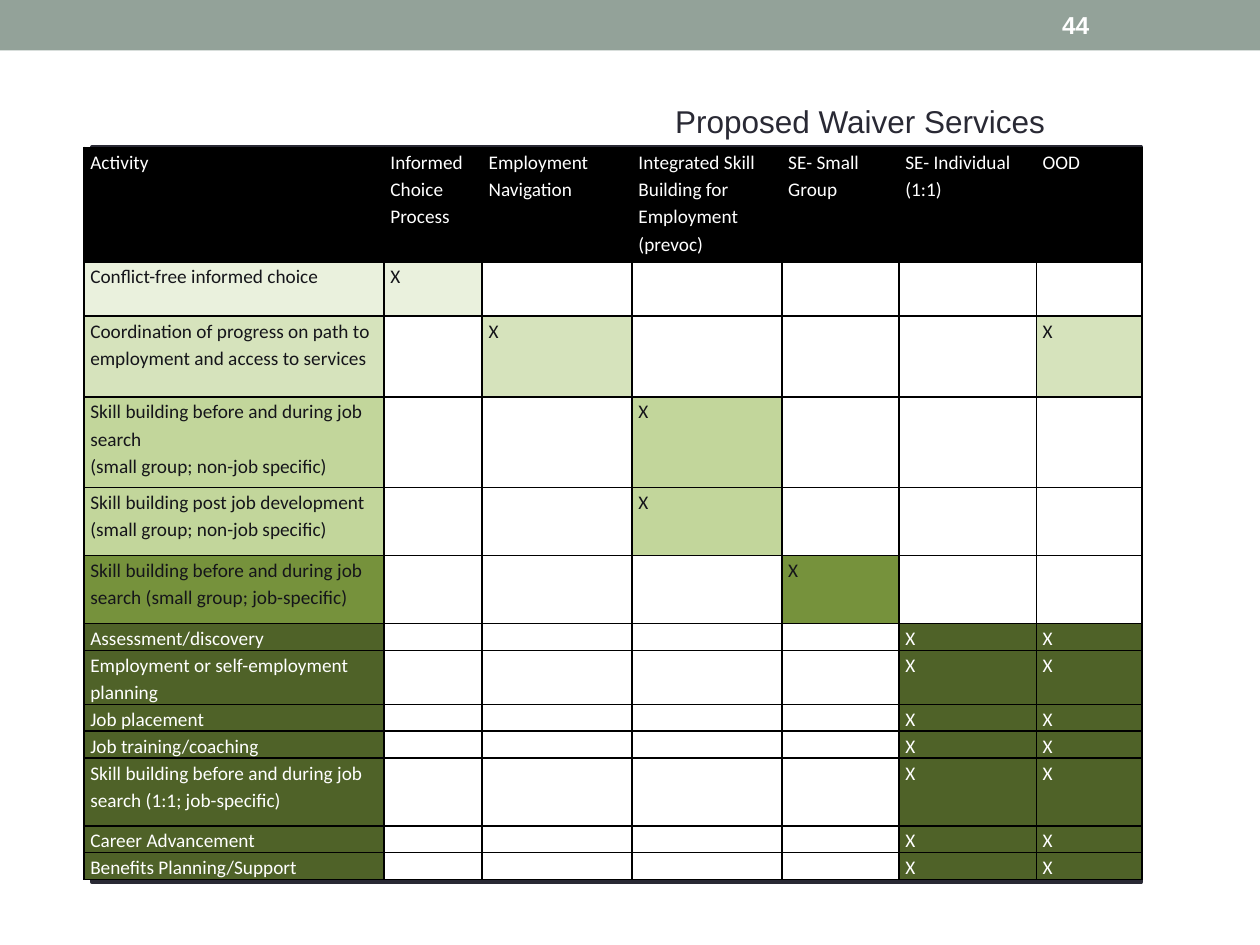
import pptx
import pptx.dml.color
import pptx.enum.shapes
import pptx.enum.text
import pptx.oxml
import pptx.oxml.ns
import pptx.util

Cm = pptx.util.Cm
Pt = pptx.util.Pt

COLORS = {
    "banner": "93A299",
    "ink": "292934",
    "body": "15151A",
    "white": "FFFFFF",
    "black": "000000",
    "palest": "EAF1DD",
    "pale": "D6E3BC",
    "light": "C2D69B",
    "medium": "76923C",
    "dark": "4F6228",
}

TITLE = "Proposed Waiver Services"
PAGE_NUMBER = "44"

COLUMNS = [
    ("Activity", 6.05),
    ("Informed Choice Process", 1.98),
    ("Employment Navigation", 3.02),
    ("Integrated Skill Building for Employment (prevoc)", 3.02),
    ("SE- Small Group", 2.36),
    ("SE- Individual (1:1)", 2.77),
    ("OOD", 2.13),
]
HEADER_HEIGHT = 2.31

ACTIVITIES = [
    ("Conflict-free informed choice", "palest", [1], 1.09),
    ("Coordination of progress on path to employment and access to services", "pale", [2, 6], 1.63),
    ("Skill building before and during job search\n(small group; non-job specific)", "light", [3], 1.83),
    ("Skill building post job development (small group; non-job specific)", "light", [3], 1.37),
    ("Skill building before and during job search (small group; job-specific)", "medium", [4], 1.37),
    ("Assessment/discovery", "dark", [5, 6], 0.54),
    ("Employment or self-employment planning", "dark", [5, 6], 1.09),
    ("Job placement", "dark", [5, 6], 0.54),
    ("Job training/coaching", "dark", [5, 6], 0.54),
    ("Skill building before and during job search (1:1; job-specific)", "dark", [5, 6], 1.37),
    ("Career Advancement", "dark", [5, 6], 0.54),
    ("Benefits Planning/Support", "dark", [5, 6], 0.54),
]


def rgb(name):
    return pptx.dml.color.RGBColor.from_string(COLORS[name])


def style_font(font, name, size, color, bold=False):
    font.name = name
    font.size = Pt(size)
    font.bold = bold
    font.color.rgb = rgb(color)


def add_panel(page, left, top, width, height, color, line_width=None):
    panel = page.shapes.add_shape(
        pptx.enum.shapes.MSO_SHAPE.RECTANGLE, Cm(left), Cm(top), Cm(width), Cm(height))
    panel.shadow.inherit = False
    panel.fill.solid()
    panel.fill.fore_color.rgb = rgb(color)
    if line_width:
        panel.line.color.rgb = rgb(color)
        panel.line.width = Pt(line_width)
    else:
        panel.line.fill.background()


def add_text(page, text, left, top, width, height, size, color, bold=False):
    box = page.shapes.add_textbox(Cm(left), Cm(top), Cm(width), Cm(height))
    frame = box.text_frame
    frame.word_wrap = True
    frame.vertical_anchor = pptx.enum.text.MSO_ANCHOR.MIDDLE
    frame.text = text
    style_font(frame.paragraphs[0].font, "Arial", size, color, bold)


def add_borders(cell):
    properties = cell._tc.get_or_add_tcPr()
    for position, side in enumerate(["lnL", "lnR", "lnT", "lnB"]):
        border = pptx.oxml.parse_xml(
            f'<a:{side} {pptx.oxml.ns.nsdecls("a")} w="{Pt(1)}"><a:solidFill>'
            f'<a:srgbClr val="{COLORS["black"]}"/></a:solidFill></a:{side}>')
        properties.insert(position, border)


def fill_cell(cell, text, fill, color):
    cell.margin_left = cell.margin_right = Cm(0.13)
    cell.margin_top = cell.margin_bottom = 0
    cell.fill.solid()
    cell.fill.fore_color.rgb = rgb(fill)
    add_borders(cell)
    cell.text_frame.text = text
    for para in cell.text_frame.paragraphs:
        para.line_spacing = 1.15
        style_font(para.font, "Calibri", 11, color)
        if not text:
            para._p.append(pptx.oxml.parse_xml(
                f'<a:endParaRPr {pptx.oxml.ns.nsdecls("a")} sz="1100">'
                '<a:latin typeface="Calibri"/></a:endParaRPr>'))


def add_services_table(page):
    frame = page.shapes.add_table(
        len(ACTIVITIES) + 1, len(COLUMNS), Cm(1.69), Cm(2.97),
        Cm(sum(width for _, width in COLUMNS)),
        Cm(HEADER_HEIGHT + sum(row[-1] for row in ACTIVITIES)))
    table = frame.table
    table.first_row = False
    table.horz_banding = False
    table.rows[0].height = Cm(HEADER_HEIGHT)
    for column, (heading, width) in enumerate(COLUMNS):
        table.columns[column].width = Cm(width)
        fill_cell(table.cell(0, column), heading, "black", "white")
    for row, (activity, shade, marked, height) in enumerate(ACTIVITIES, start=1):
        table.rows[row].height = Cm(height)
        color = "white" if shade == "dark" else "body"
        for column in range(len(COLUMNS)):
            text = activity if column == 0 else "X" if column in marked else ""
            fill_cell(table.cell(row, column), text, shade if text else "white", color)


def main():
    deck = pptx.Presentation()
    deck.slide_width = Cm(25.4)
    deck.slide_height = Cm(19.05)
    page = deck.slides.add_slide(deck.slide_layouts[6])
    add_panel(page, 0, 0, 25.4, 1.02, "banner")
    add_text(page, TITLE, 13.36, 1.92, 9.65, 1.02, 18, "ink")
    add_panel(page, 1.85, 2.97, 21.16, 14.81, "ink", 2.08)
    add_text(page, PAGE_NUMBER, 21.16, 0.05, 2.97, 0.91, 14, "white", bold=True)
    add_services_table(page)
    deck.save("out.pptx")


if __name__ == "__main__":
    main()
